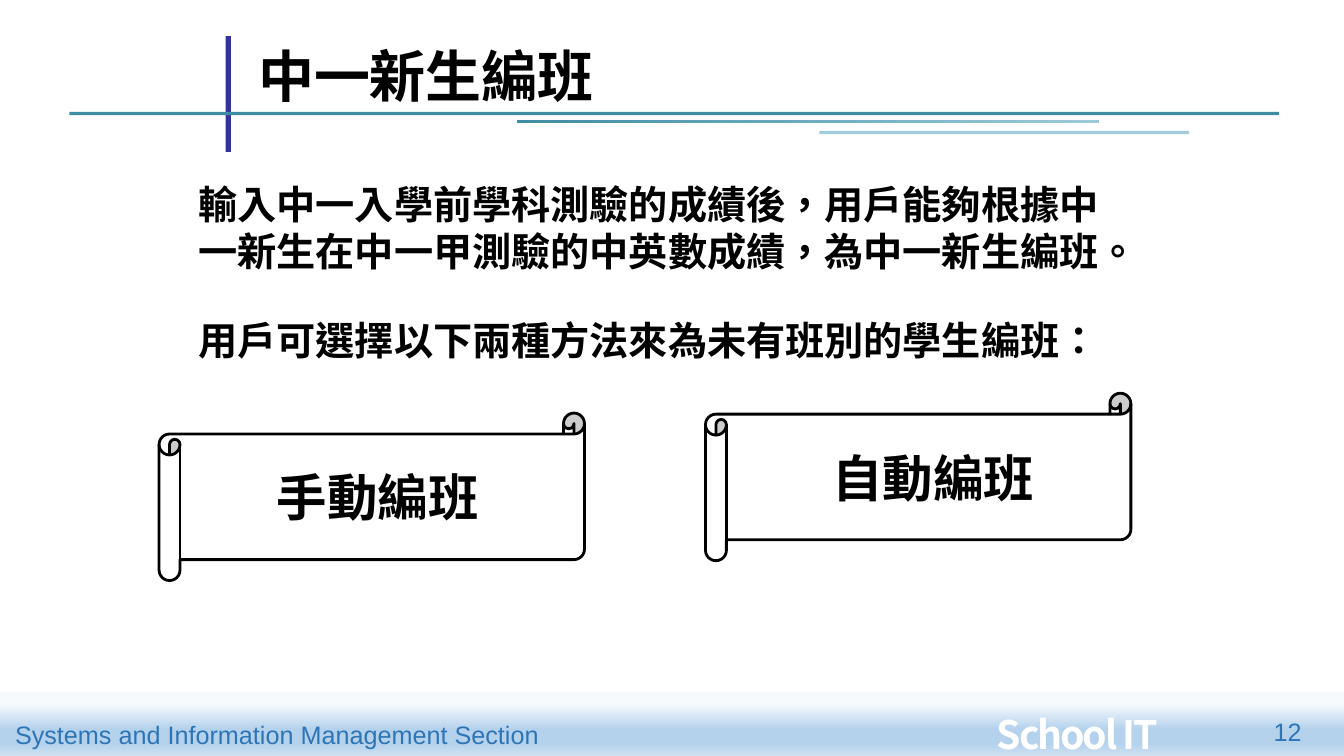
from dataclasses import dataclass

from lxml.etree import SubElement
from pptx import Presentation
from pptx.dml.color import RGBColor
from pptx.enum.lang import MSO_LANGUAGE_ID as Language
from pptx.enum.shapes import MSO_SHAPE as Shape
from pptx.enum.text import MSO_ANCHOR as Anchor, PP_ALIGN as Align
from pptx.oxml.ns import qn
from pptx.util import Cm, Pt


@dataclass(frozen=True)
class Theme:
    black: str = "000000"
    white: str = "FFFFFF"
    indigo: str = "333399"
    teal: str = "3F8DA5"
    sky: str = "9BCAD9"
    pale: str = "A1CDDB"
    footer_text: str = "2E75B6"
    footer_stops: tuple = ((18, "F7FAFD"), (58, "B5D2EC"), (81, "B5D2EC"), (100, "CEE1F2"))
    latin: str = "Arial"
    chinese: str = "Noto Sans CJK SC"
    title_size: float = 40
    scroll_size: float = 36
    body_size: float = 28
    body_leading: float = 33.6
    brand_size: float = 28
    footer_size: float = 18


THEME = Theme()


def apply(target, values):
    for name, value in values.items():
        setattr(target, name, value)


def place(shape, box):
    apply(shape, dict(zip(("left", "top", "width", "height"), map(Cm, box))))


def write(paragraph, text, size, color, font=THEME.latin, bold=False, language=None):
    run = paragraph.add_run()
    run.text = text
    apply(run.font, {"name": font, "size": Pt(size), "bold": bold})
    run.font.color.rgb = RGBColor.from_string(color)
    if language:
        run.font.language_id = language
    return run


def write_chinese(paragraph, text, size, font=THEME.latin):
    return write(paragraph, text, size, THEME.black, font, True, Language.CHINESE_HONG_KONG_SAR)


def add_shape(slide, kind, box, color):
    shape = slide.shapes.add_shape(kind, *map(Cm, box))
    shape.shadow.inherit = False
    shape.fill.solid()
    shape.fill.fore_color.rgb = RGBColor.from_string(color)
    shape.line.fill.background()
    return shape


def add_gradient_bar(slide, box, stops, angle):
    bar = add_shape(slide, Shape.RECTANGLE, box, THEME.white)
    bar.fill.gradient()
    gradient = bar.fill._xPr.find(qn("a:gradFill"))
    for child in list(gradient):
        gradient.remove(child)
    stop_list = SubElement(gradient, qn("a:gsLst"))
    for position, color in stops:
        stop = SubElement(stop_list, qn("a:gs"), pos=str(position * 1000))
        SubElement(stop, qn("a:srgbClr"), val=color)
    SubElement(gradient, qn("a:lin"), ang=str(angle * 60000), scaled="0")


def add_text_box(slide, box, wrap=True):
    frame = slide.shapes.add_textbox(*map(Cm, box)).text_frame
    frame.word_wrap = wrap
    return frame


def add_scroll(slide, box, text, indent):
    scroll = add_shape(slide, Shape.HORIZONTAL_SCROLL, box, THEME.white)
    scroll.line.color.rgb = RGBColor.from_string(THEME.black)
    scroll.line.width = Pt(2)
    frame = scroll.text_frame
    apply(frame, {"margin_left": Cm(indent), "vertical_anchor": Anchor.MIDDLE})
    paragraph = frame.paragraphs[0]
    paragraph.alignment = Align.LEFT
    write_chinese(paragraph, text, THEME.scroll_size)


def add_title(slide, text):
    title = slide.shapes.title
    place(title, (6.25, 0.76, 26.82, 2.11))
    apply(title.text_frame, {"vertical_anchor": Anchor.BOTTOM, "word_wrap": True})
    paragraph = title.text_frame.paragraphs[0]
    paragraph.alignment = Align.LEFT
    write_chinese(paragraph, text, THEME.title_size, THEME.chinese)


def add_title_rules(slide):
    for box, color in (
        ((5.69, 0.91, 0.13, 2.92), THEME.indigo),
        ((1.75, 2.82, 30.48, 0.08), THEME.teal),
        ((20.65, 3.3, 9.32, 0.08), THEME.pale),
    ):
        add_shape(slide, Shape.RECTANGLE, box, color)
    add_gradient_bar(slide, (13.03, 3.02, 14.66, 0.08), ((0, THEME.teal), (100, THEME.sky)), 0)


def add_body(slide, texts):
    frame = add_text_box(slide, (4.65, 4.42, 23.52, 12.8))
    for index, text in enumerate(texts):
        paragraph = frame.add_paragraph() if index else frame.paragraphs[0]
        apply(paragraph, {
            "space_before": Pt(12 if index else 0),
            "space_after": Pt(18),
            "line_spacing": Pt(THEME.body_leading),
        })
        paragraph._p.get_or_add_pPr().set("marL", str(Cm(0.1)))
        write_chinese(paragraph, text, THEME.body_size)


def add_footer(slide, section, brand, number):
    add_gradient_bar(slide, (0, 17.45, 33.87, 1.6), THEME.footer_stops, 90)
    section_frame = add_text_box(slide, (0.13, 18.01, 13.84, 1.02), wrap=False)
    write(section_frame.paragraphs[0], section, THEME.footer_size, THEME.footer_text)
    brand_frame = add_text_box(slide, (24.87, 17.78, 6.93, 1.45))
    brand_run = write(brand_frame.paragraphs[0], brand, THEME.brand_size, THEME.white,
                      THEME.chinese, True)
    brand_run._r.get_or_add_rPr().set("spc", "-150")
    number_frame = add_text_box(slide, (29.72, 17.93, 3.33, 1.27))
    number_frame.paragraphs[0].alignment = Align.RIGHT
    write(number_frame.paragraphs[0], number, THEME.footer_size, THEME.footer_text)


def main():
    presentation = Presentation()
    apply(presentation, {"slide_width": Cm(33.87), "slide_height": Cm(19.05)})
    slide = presentation.slides.add_slide(presentation.slide_layouts[5])
    add_footer(slide, "Systems and Information Management Section", "School IT", "12")
    add_title_rules(slide)
    add_title(slide, "中一新生編班")
    add_body(slide, (
        "輸入中一入學前學科測驗的成績後，用戶能夠根據中一新生在中一甲測驗的中英數成績，為中一新生編班。",
        "用戶可選擇以下兩種方法來為未有班別的學生編班：",
    ))
    add_scroll(slide, (4.01, 10.41, 10.72, 4.22), "手動編班", 2.44)
    add_scroll(slide, (17.78, 9.91, 10.72, 4.22), "自動編班", 2.67)
    presentation.save("out.pptx")


if __name__ == "__main__":
    main()
